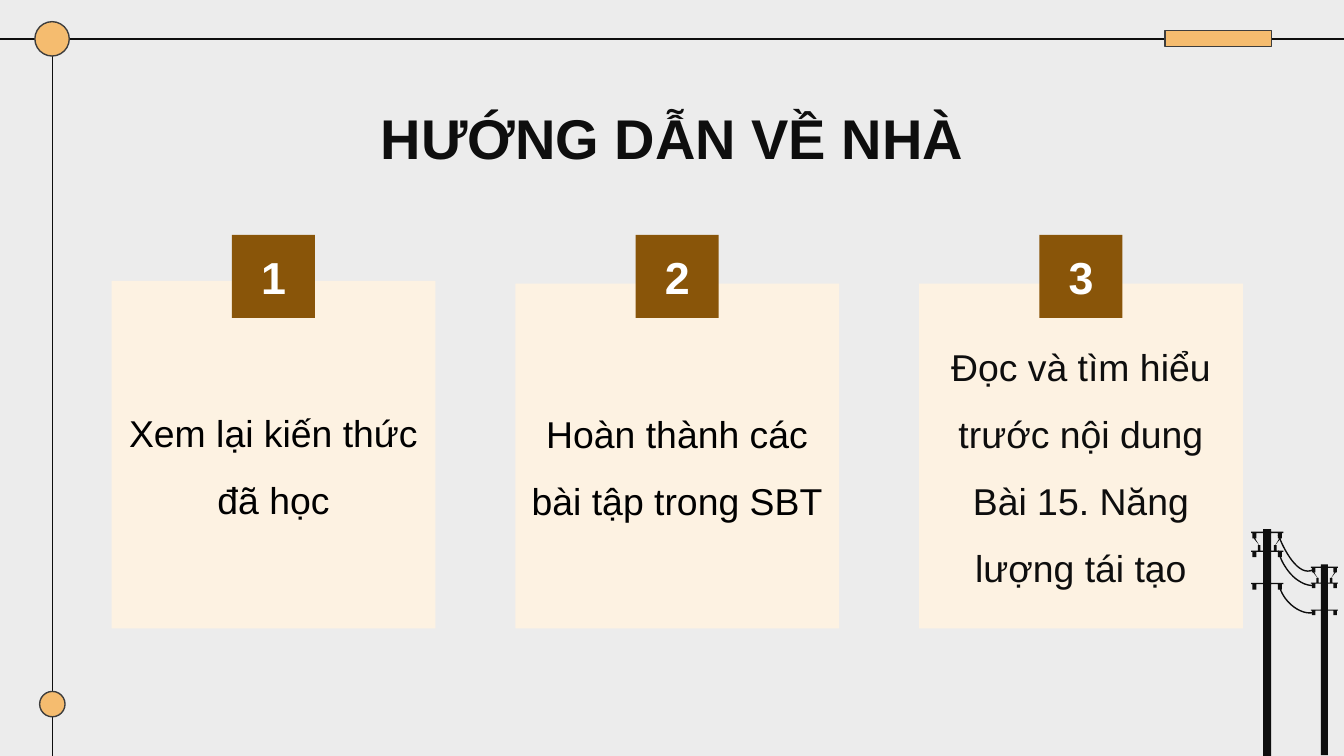
"""Build the homework slide with three numbered cards."""
from lxml import etree
from pptx import Presentation, util as u
from pptx.dml import color
from pptx.enum import shapes, text
from pptx.oxml import ns

INK, GOLD, EDGE = "0E0E0E", "F5BC6F", "3D3D3D"
CREAM, BROWN, WHITE = "FDF2E2", "895509", "FFFFFF"
RECT, OVAL = shapes.MSO_SHAPE.RECTANGLE, shapes.MSO_SHAPE.OVAL
MID, LOW = text.MSO_ANCHOR.MIDDLE, text.MSO_ANCHOR.BOTTOM

HALF = [(3, 0), (3, 2), (12, 2), (12, 3), (11, 3), (11, 7), (10, 7), (6, 12),
        (7, 12), (7, 16), (12, 16), (12, 17), (11, 17), (11, 21), (8, 21),
        (8, 17), (3, 17), (3, 40), (12, 40), (12, 41), (11, 41), (11, 45),
        (8, 45), (8, 41), (3, 41), (3, 169)]
HOLE = [(3, 16), (5, 16), (5, 12), (6, 12), (9, 7), (8, 7), (8, 3), (3, 3)]
WIRES = [[(24.82, 10.77), (24.54, 10.92), (24.26, 10.39), (24.16, 10.11)],
         [(24.82, 11.07), (24.51, 11.07), (24.23, 10.72), (24.16, 10.41)],
         [(24.82, 11.58), (24.54, 11.63), (24.23, 11.33), (24.18, 11.07)]]
CARDS = [("Xem lại kiến thức đã học", 5.31, "000000"),
         ("Hoàn thành các bài tập trong SBT", 5.36, "000000"),
         ("Đọc và tìm hiểu trước nội dung Bài 15. Năng lượng tái tạo", 5.36, INK)]


def rgb(code):
    """Turn a hex string into a colour."""
    return color.RGBColor.from_string(code)


def flip(half):
    """Mirror points about the vertical axis, in reverse order."""
    return [(-x, y) for x, y in reversed(half)]


def curve(ends, steps=16):
    """Sample a cubic curve as points in thousandths of a centimetre."""
    dots = []
    for i in range(steps + 1):
        t = i / steps
        parts = ((1 - t) ** 3, 3 * t * (1 - t) ** 2, 3 * t * t * (1 - t), t ** 3)
        dots.append(tuple(round(1000 * sum(w * p[k] for w, p in zip(parts, ends)))
                          for k in (0, 1)))
    return dots


class Deck:
    """Hold the style and the current slide."""

    font = {"name": "Arial", "size": u.Pt(20), "bold": False}
    rule = u.Pt(0.75)

    def __init__(self, wide, high, back):
        """Open a blank slide of the given size and colour."""
        self.show = Presentation()
        self.show.slide_width, self.show.slide_height = u.Cm(wide), u.Cm(high)
        self.slide = self.show.slides.add_slide(self.show.slide_layouts[6])
        self.items = self.slide.shapes
        fill = self.slide.background.fill
        fill.solid()
        fill.fore_color.rgb = rgb(back)

    def paint(self, item, fill=None, edge=None):
        """Set the fill and outline of a shape."""
        item.shadow.inherit = False
        if fill:
            item.fill.solid()
            item.fill.fore_color.rgb = rgb(fill)
        else:
            item.fill.background()
        if edge:
            item.line.color.rgb = rgb(edge)
            item.line.width = self.rule
        else:
            item.line.fill.background()

    def line(self, *ends):
        """Draw a straight line."""
        item = self.items.add_connector(shapes.MSO_CONNECTOR.STRAIGHT,
                                        *map(u.Cm, ends))
        item.line.color.rgb = rgb(INK)
        item.line.width = self.rule
        etree.SubElement(item._element.spPr, ns.qn("a:effectLst"))

    def shape(self, kind, box, fill, edge=None):
        """Draw a preset shape."""
        item = self.items.add_shape(kind, *map(u.Cm, box))
        self.paint(item, fill, edge)
        return item

    def label(self, box):
        """Place an empty text box."""
        return self.items.add_textbox(*map(u.Cm, box))

    def words(self, item, line, ink, anchor=MID, space=1.0, **style):
        """Put centred text in a shape."""
        frame = item.text_frame
        frame.word_wrap, frame.vertical_anchor = True, anchor
        para = frame.paragraphs[0]
        para.text = line
        para.alignment, para.line_spacing = text.PP_ALIGN.CENTER, space
        for key, value in {**self.font, **style}.items():
            setattr(para.font, key, value)
        para.font.color.rgb = rgb(ink)

    def pole(self, x, y, size):
        """Draw a power pole with its top centre at x, y."""
        rings = [HALF + flip(HALF), HOLE, flip(HOLE)]
        pen = self.items.build_freeform(*rings[0][0], scale=u.Cm(0.0254 * size))
        for i, ring in enumerate(rings):
            if i:
                pen.move_to(*ring[0])
            pen.add_line_segments(ring[1:], close=True)
        self.paint(pen.convert_to_shape(u.Cm(x), u.Cm(y)), INK)

    def wire(self, ends):
        """Draw a hanging wire."""
        dots = curve(ends)
        pen = self.items.build_freeform(*dots[0], scale=u.Cm(0.001))
        pen.add_line_segments(dots[1:], close=False)
        self.paint(pen.convert_to_shape(), edge=INK)


def main():
    """Build and save the slide."""
    deck = Deck(25.4, 14.29, "ECECEC")
    deck.line(25.4, 0.74, 0, 0.74)
    deck.line(0.99, 0.72, 0.99, 14.29)
    for kind, box in ((RECT, (22.02, 0.58, 2.01, 0.3)),
                      (OVAL, (0.66, 0.41, 0.65, 0.65)),
                      (OVAL, (0.75, 13.07, 0.48, 0.48))):
        deck.shape(kind, box, GOLD, EDGE)

    deck.pole(25.03, 10.67, 0.84)
    deck.pole(23.95, 10, 1)
    for ends in WIRES:
        deck.wire(ends)

    title = deck.label((5.54, 1.88, 14.33, 1.6))
    title.text_frame.margin_bottom = u.Cm(0.25)
    deck.words(title, "HƯỚNG DẪN VỀ NHÀ", INK, LOW, size=u.Pt(30), bold=True)

    wide, side = 6.12, 1.57
    for i, (task, top, ink) in enumerate(CARDS):
        left = 2.11 + 7.63 * i
        card = deck.shape(RECT, (left, top, wide, 11.88 - top), CREAM)
        deck.words(card, task, ink, space=1.5)
        badge = deck.shape(RECT, (left + (wide - side) / 2, 4.44, side, side), BROWN)
        deck.words(badge, str(i + 1), WHITE, size=u.Pt(24), bold=True)

    deck.show.save("out.pptx")


if __name__ == "__main__":
    main()
